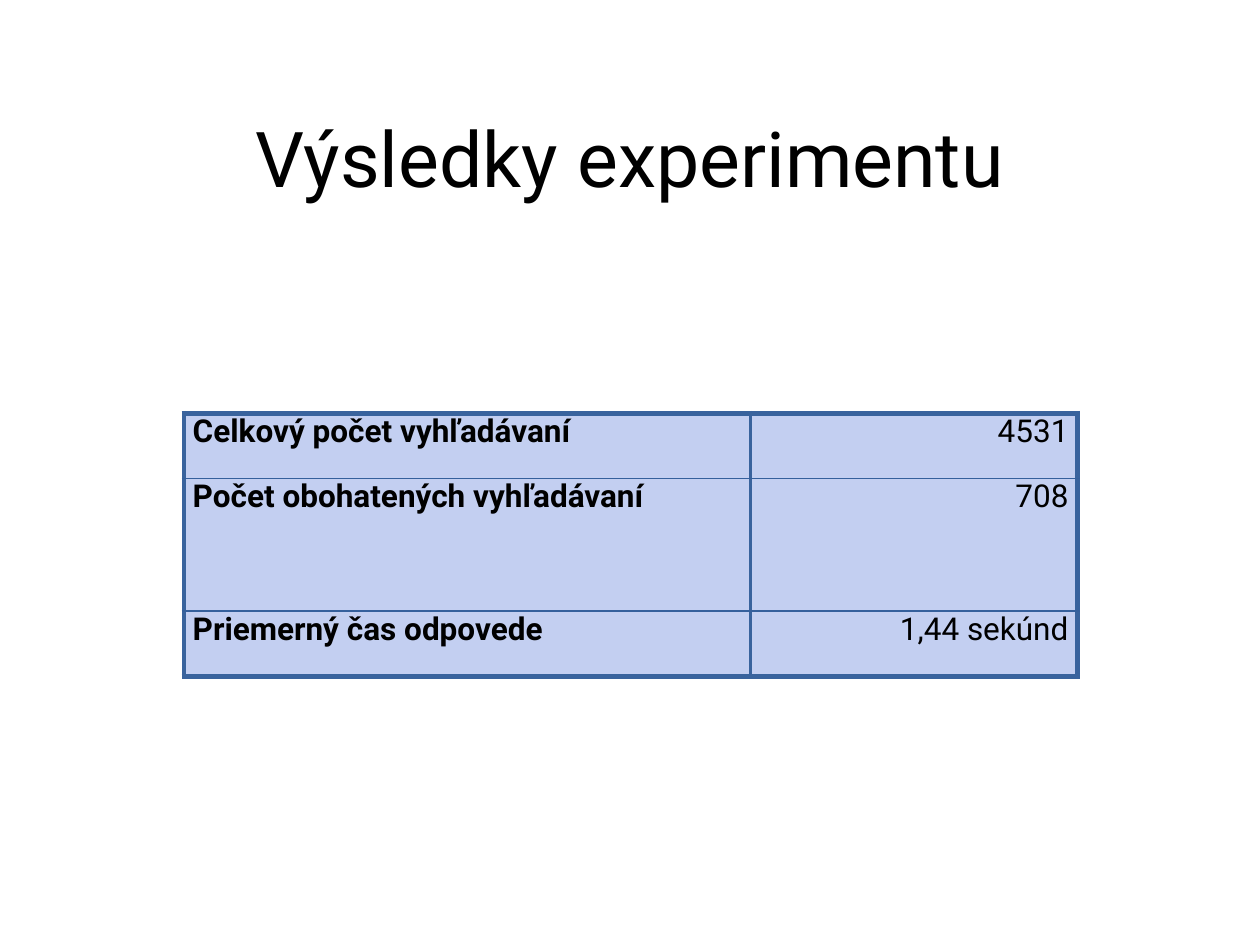
from lxml import etree
from pptx import Presentation, util as u
from pptx.dml.color import RGBColor
from pptx.enum import text
from pptx.oxml.ns import qn

# Content
TITLE = "Výsledky experimentu"
ROWS = [
    ("Celkový počet vyhľadávaní", "4531"),
    ("Počet obohatených vyhľadávaní", "708"),
    ("Priemerný čas odpovede", "1,44 sekúnd"),
]

# Format
COLORS = {"text": "000000", "fill": "C3CFF1", "outer": "39639D", "inner": "35609C"}
FONT = "Roboto"
TITLE_BOX = (0.51, 0.74, 8.98, 1.01)
TABLE_LEFT, TABLE_TOP = 1.46, 3.28
COL_WIDTHS = (4.5, 2.59)
ROW_HEIGHTS = (0.52, 1.05, 0.52)
ALIGNS = (text.PP_ALIGN.JUSTIFY, text.PP_ALIGN.RIGHT)
MARGINS = {"margin_left": 0.07, "margin_right": 0.07, "margin_top": 0, "margin_bottom": 0}
OUTER, DIVIDER, INNER = ("outer", 3), ("outer", 2), ("inner", 0.75)


def write(p, words, size, align, bold=False):
    p.alignment = align
    r = p.add_run()
    r.text = words
    for name, value in {"name": FONT, "size": u.Pt(size), "bold": bold}.items():
        setattr(r.font, name, value)
    r.font.color.rgb = RGBColor.from_string(COLORS["text"])


def set_borders(cell, borders):
    tc_pr = cell._tc.get_or_add_tcPr()
    for side, (color, width) in borders.items():
        ln = etree.SubElement(tc_pr, qn("a:ln" + side), w=str(u.Pt(width)))
        fill = etree.SubElement(ln, qn("a:solidFill"))
        etree.SubElement(fill, qn("a:srgbClr"), val=COLORS[color])


prs = Presentation()
prs.slide_width, prs.slide_height = u.Inches(10), u.Inches(7.5)
s = prs.slides.add_slide(prs.slide_layouts[5])

# Title
title = s.shapes.title
for name, value in zip(("left", "top", "width", "height"), TITLE_BOX):
    setattr(title, name, u.Inches(value))
tf = title.text_frame
tf.vertical_anchor = text.MSO_ANCHOR.MIDDLE
write(tf.paragraphs[0], TITLE, 44, text.PP_ALIGN.CENTER)

# Results table
last_row, last_col = len(ROWS) - 1, len(COL_WIDTHS) - 1
box = (TABLE_LEFT, TABLE_TOP, sum(COL_WIDTHS), sum(ROW_HEIGHTS))
table = s.shapes.add_table(len(ROWS), len(COL_WIDTHS), *map(u.Inches, box)).table
table.first_row = table.horz_banding = False
for col, width in zip(table.columns, COL_WIDTHS):
    col.width = u.Inches(width)
for row, height in zip(table.rows, ROW_HEIGHTS):
    row.height = u.Inches(height)

for i, values in enumerate(ROWS):
    for j, value in enumerate(values):
        cell = table.cell(i, j)
        for name, margin in MARGINS.items():
            setattr(cell, name, u.Inches(margin))
        write(cell.text_frame.paragraphs[0], value, 18, ALIGNS[j], bold=j == 0)
        set_borders(cell, {
            "L": OUTER if j == 0 else INNER,
            "R": OUTER if j == last_col else DIVIDER,
            "T": OUTER if i == 0 else INNER,
            "B": OUTER if i == last_row else INNER,
        })
        cell.fill.solid()
        cell.fill.fore_color.rgb = RGBColor.from_string(COLORS["fill"])

prs.save("out.pptx")
